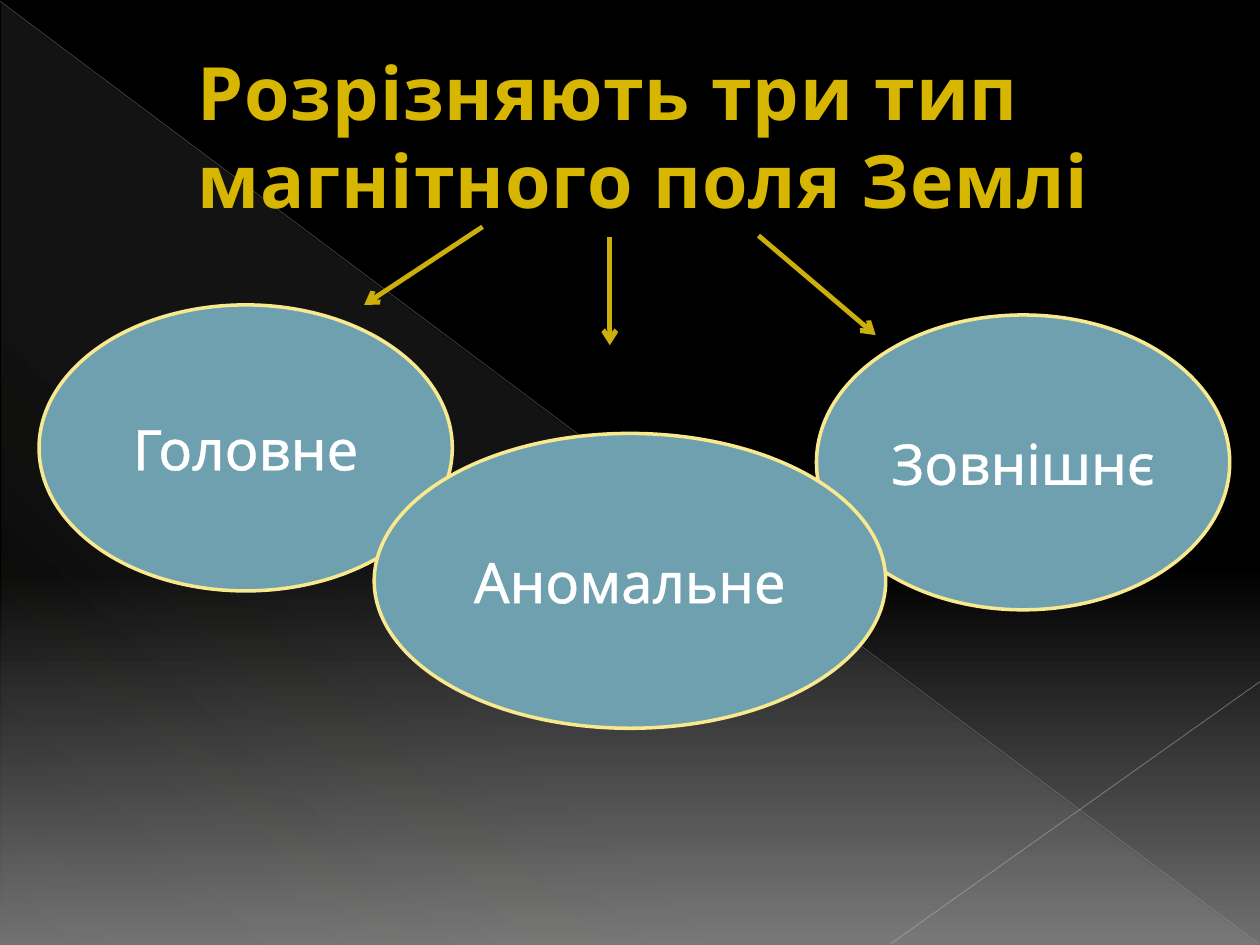
from lxml import etree
from pptx import Presentation
from pptx.dml.color import RGBColor
from pptx.enum import shapes, text
from pptx.oxml.ns import qn
from pptx.util import Inches, Pt

FONT = "League Spartan"
WHITE = "FFFFFF"
GOLD = "CCAF0A"


def rgb(value):
    return RGBColor.from_string(value)


def add_color(parent, value, opacity=100):
    color = etree.SubElement(parent, qn("a:srgbClr"), val=value)
    if opacity < 100:
        etree.SubElement(color, qn("a:alpha"), val=str(opacity * 1000))


def set_gradient(fill, owner, stops, angle):
    """Give fill, the only gradient inside owner, stops of (position, colour, opacity)."""
    fill.gradient()
    gradient = next(owner.iter(qn("a:gradFill")))
    for child in list(gradient):
        gradient.remove(child)
    stop_list = etree.SubElement(gradient, qn("a:gsLst"))
    for position, *color in stops:
        stop = etree.SubElement(stop_list, qn("a:gs"), pos=str(position * 1000))
        add_color(stop, *color)
    etree.SubElement(gradient, qn("a:lin"), ang=str(angle * 60000), scaled="0")


def style_font(font, **values):
    for name, value in values.items():
        setattr(font, name, value)


def add_line(slide, start, end, color, width, opacity=100, arrow=False):
    line = slide.shapes.add_connector(
        shapes.MSO_CONNECTOR.STRAIGHT, *map(Inches, start + end))
    line.line.color.rgb = rgb(color)
    line.line.width = Pt(width)
    properties = line.element.spPr
    if opacity < 100:
        solid = next(properties.iter(qn("a:solidFill")))
        solid.clear()
        add_color(solid, color, opacity)
    if arrow:
        etree.SubElement(properties.find(qn("a:ln")), qn("a:tailEnd"), type="arrow")
    etree.SubElement(properties, qn("a:effectLst"))


def add_backdrop(slide):
    set_gradient(slide.background.fill, slide.element,
                 [(0, "000000"), (60, "000000"), (100, "707070")], 90)
    corner = slide.shapes.add_shape(
        shapes.MSO_SHAPE.RIGHT_TRIANGLE, *map(Inches, (0.01, 0.02, 9.98, 7.48)))
    corner.shadow.inherit = False
    corner.line.fill.background()
    set_gradient(corner.fill, corner.element,
                 [(0, "D4D2D0", 10), (70, "D4D2D0", 8), (100, "D4D2D0", 1)], 133)
    add_line(slide, (0, 0.01), (9.99, 7.49), "B7B7B7", 0.39, opacity=35)
    add_line(slide, (10, 5.41), (7.07, 7.49), "BFBFBF", 0.47, opacity=45)


def add_title(slide, wording):
    title = slide.shapes.add_textbox(*map(Inches, (0.94, 0.31, 9.42, 1.53)))
    frame = title.text_frame
    frame.word_wrap = True
    frame.vertical_anchor = text.MSO_ANCHOR.MIDDLE
    paragraph = frame.paragraphs[0]
    paragraph._p.get_or_add_pPr().set("marL", str(Inches(0.53)))
    run = paragraph.add_run()
    run.text = wording
    style_font(run.font, name=FONT, size=Pt(42), bold=True)
    set_gradient(run.font.fill, title.element, [(25, "D6B600"), (100, "978100")], 90)
    run._r.get_or_add_rPr().set("spc", "50")


def add_field_type(slide, wording, box):
    oval = slide.shapes.add_shape(shapes.MSO_SHAPE.OVAL, *map(Inches, box))
    oval.shadow.inherit = False
    oval.fill.solid()
    oval.fill.fore_color.rgb = rgb("6EA0B0")
    oval.line.color.rgb = rgb("F9E98E")
    oval.line.width = Pt(2)
    frame = oval.text_frame
    frame.vertical_anchor = text.MSO_ANCHOR.MIDDLE
    paragraph = frame.paragraphs[0]
    paragraph.alignment = text.PP_ALIGN.CENTER
    run = paragraph.add_run()
    run.text = wording
    style_font(run.font, name=FONT, size=Pt(32))
    run.font.color.rgb = rgb(WHITE)
    outline = etree.Element(qn("a:ln"), w=str(Pt(1.45)))
    add_color(etree.SubElement(outline, qn("a:solidFill")), WHITE)
    run._r.get_or_add_rPr().insert(0, outline)


def main():
    deck = Presentation()
    deck.slide_width, deck.slide_height = Inches(10), Inches(7.5)
    slide = deck.slides.add_slide(deck.slide_layouts[6])
    add_backdrop(slide)
    add_title(slide, "Розрізняють три тип магнітного поля Землі")

    field_types = [
        ("Головне", (0.31, 2.42, 3.28, 2.27)),
        ("Зовнішнє", (6.48, 2.5, 3.28, 2.34)),
        ("Аномальне", (2.97, 3.44, 4.06, 2.34)),
    ]
    for wording, box in field_types:
        add_field_type(slide, wording, box)

    arrows = [
        ((6.02, 1.87), (6.95, 2.66)),
        ((3.83, 1.8), (2.89, 2.42)),
        ((4.84, 1.88), (4.84, 2.74)),
    ]
    for start, end in arrows:
        add_line(slide, start, end, GOLD, 2.75, arrow=True)
    deck.save("out.pptx")


if __name__ == "__main__":
    main()
